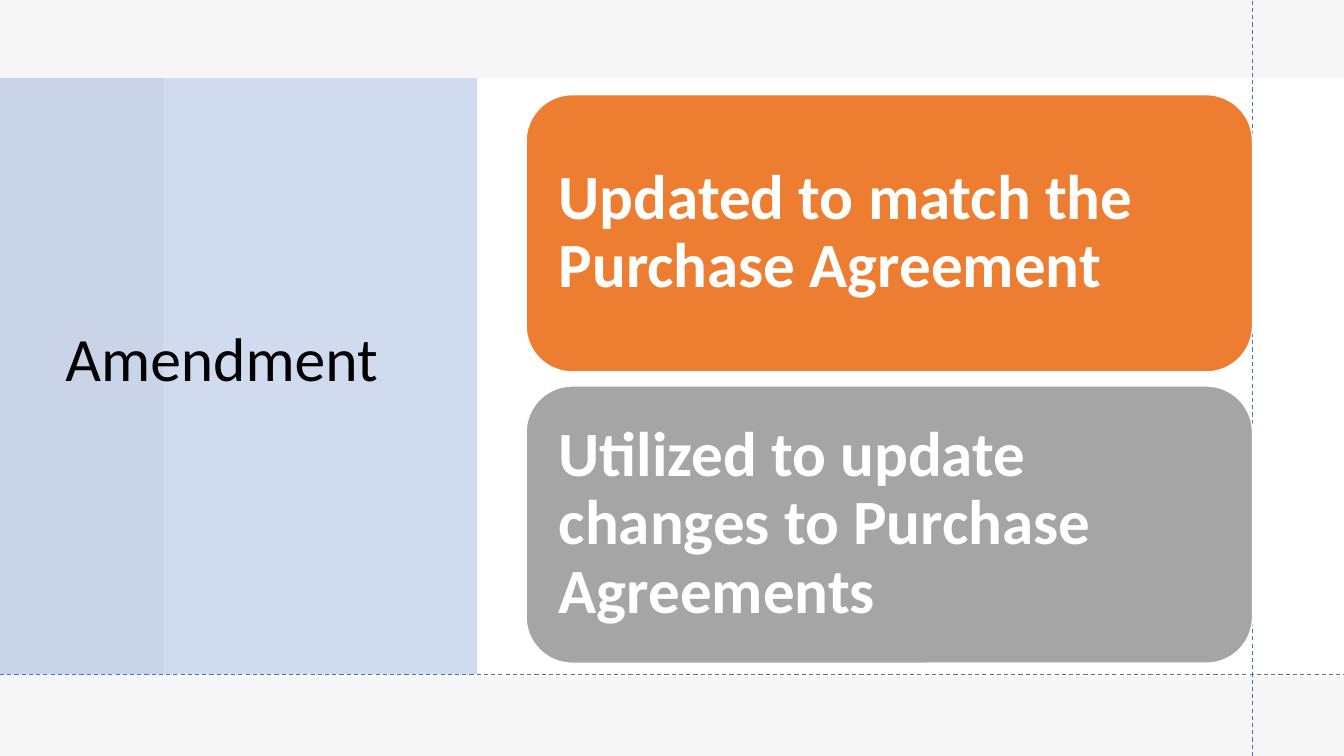
"""Build the Amendment slide: a title panel beside two stacked message cards."""
import pptx
import pptx.dml.color
import pptx.enum.dml
import pptx.enum.shapes
import pptx.enum.text
import pptx.oxml
import pptx.oxml.ns
import pptx.util

RGBColor = pptx.dml.color.RGBColor
WHITE = RGBColor(0xFF, 0xFF, 0xFF)
BLACK = RGBColor(0x00, 0x00, 0x00)
BACKDROP = RGBColor(0xF6, 0xF6, 0xF6)
GREY = RGBColor(0xE7, 0xE6, 0xE6)
BLUE = RGBColor(0x44, 0x72, 0xC4)
ORANGE = RGBColor(0xED, 0x7D, 0x31)
SILVER = RGBColor(0xA5, 0xA5, 0xA5)

SLIDE_WIDTH = pptx.util.Inches(13.333)
SLIDE_HEIGHT = pptx.util.Inches(7.5)
SHAPES = pptx.enum.shapes.MSO_SHAPE

GUIDE_X = 93.2
GUIDE_Y = 89.2
CARD_LEFT = 39.15
CARD_TOP = 12.53
CARD_HEIGHT = 36.67
CARD_STEP = 38.53
CARDS = [
    ("Updated to match the Purchase Agreement", ORANGE),
    ("Utilized to update changes to Purchase Agreements", SILVER),
]


def across(percent):
    """Return a share of the slide width."""
    return round(SLIDE_WIDTH * percent / 100)


def down(percent):
    """Return a share of the slide height."""
    return round(SLIDE_HEIGHT * percent / 100)


def place(left, top, width, height):
    """Turn percentages of the slide into a position and size."""
    return across(left), down(top), across(width), down(height)


def add_block(page, kind, area, color, opacity=100):
    """Add a flat filled shape without an outline."""
    block = page.shapes.add_shape(kind, *place(*area))
    block.shadow.inherit = False
    block.fill.solid()
    block.fill.fore_color.rgb = color
    block.line.fill.background()
    if opacity < 100:
        tint = block.fill._xPr.find(".//" + pptx.oxml.ns.qn("a:srgbClr"))
        alpha = pptx.oxml.parse_xml(
            f'<a:alpha {pptx.oxml.ns.nsdecls("a")} val="{opacity * 1000}"/>')
        tint.append(alpha)
    return block


def write(box, text, size, color, bold=False):
    """Write one left-aligned, vertically centred paragraph."""
    frame = box.text_frame
    frame.word_wrap = True
    frame.vertical_anchor = pptx.enum.text.MSO_ANCHOR.MIDDLE
    frame.text = text
    para = frame.paragraphs[0]
    para.alignment = pptx.enum.text.PP_ALIGN.LEFT
    para.line_spacing = 0.9
    font = para.runs[0].font
    font.name = "Calibri"
    font.size = pptx.util.Pt(size)
    font.bold = bold
    font.color.rgb = color


def add_guide(page, start, end):
    """Add a thin dashed line between two points."""
    guide = page.shapes.add_connector(
        pptx.enum.shapes.MSO_CONNECTOR.STRAIGHT,
        across(start[0]), down(start[1]), across(end[0]), down(end[1]))
    guide.line.color.rgb = BLUE
    guide.line.width = pptx.util.Pt(0.75)
    guide.line.dash_style = pptx.enum.dml.MSO_LINE.DASH
    guide._element.spPr.append(pptx.oxml.parse_xml(
        f'<a:effectLst {pptx.oxml.ns.nsdecls("a")}/>'))


def add_card(page, row, text, color):
    """Add a rounded message card in the given row."""
    area = (CARD_LEFT, CARD_TOP + row * CARD_STEP, GUIDE_X - CARD_LEFT, CARD_HEIGHT)
    card = add_block(page, SHAPES.ROUNDED_RECTANGLE, area, color)
    card.line.color.rgb = WHITE
    card.line.width = pptx.util.Pt(1)
    frame = card.text_frame
    frame.margin_left = frame.margin_right = across(1.43)
    frame.margin_top = frame.margin_bottom = down(2.53)
    write(card, text, 45, WHITE, bold=True)


def main():
    """Assemble and save the slide."""
    deck = pptx.Presentation()
    deck.slide_width = SLIDE_WIDTH
    deck.slide_height = SLIDE_HEIGHT
    page = deck.slides.add_slide(deck.slide_layouts[6])
    page.background.fill.solid()
    page.background.fill.fore_color.rgb = BACKDROP

    full = (0, 0, 100, 100)
    add_block(page, SHAPES.RECTANGLE, full, WHITE)
    add_block(page, SHAPES.RECTANGLE, full, GREY, opacity=35)
    add_block(page, SHAPES.RECTANGLE, (12.15, 10.33, 87.85, 79.2), WHITE)
    add_block(page, SHAPES.RECTANGLE, (0, 10.33, 35.5, 78.9), BLUE, opacity=25)

    title = page.shapes.add_textbox(*place(4.13, 9.87, 29.62, 75.87))
    write(title, "Amendment", 44, BLACK)

    add_guide(page, (GUIDE_X, 100), (GUIDE_X, 0))
    add_guide(page, (0, GUIDE_Y), (100, GUIDE_Y))
    for row, (text, color) in enumerate(CARDS):
        add_card(page, row, text, color)
    deck.save("out.pptx")


if __name__ == "__main__":
    main()
